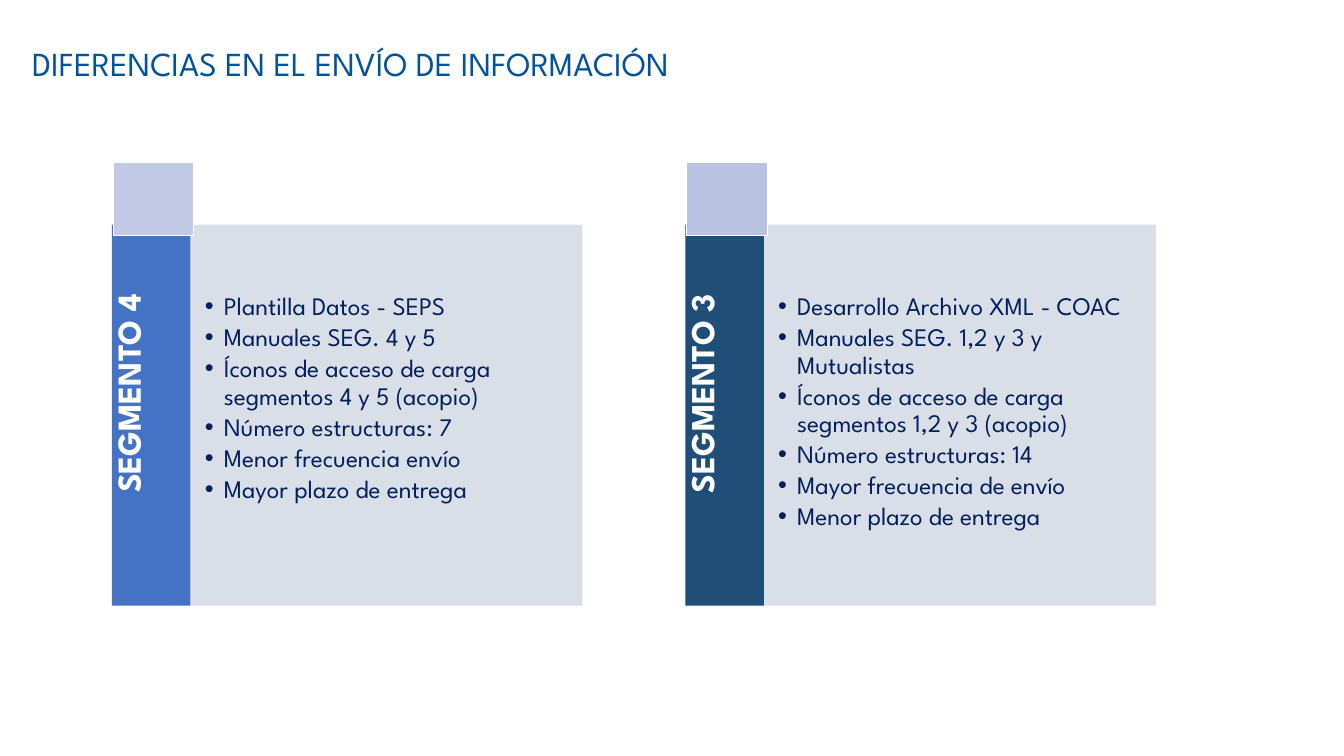
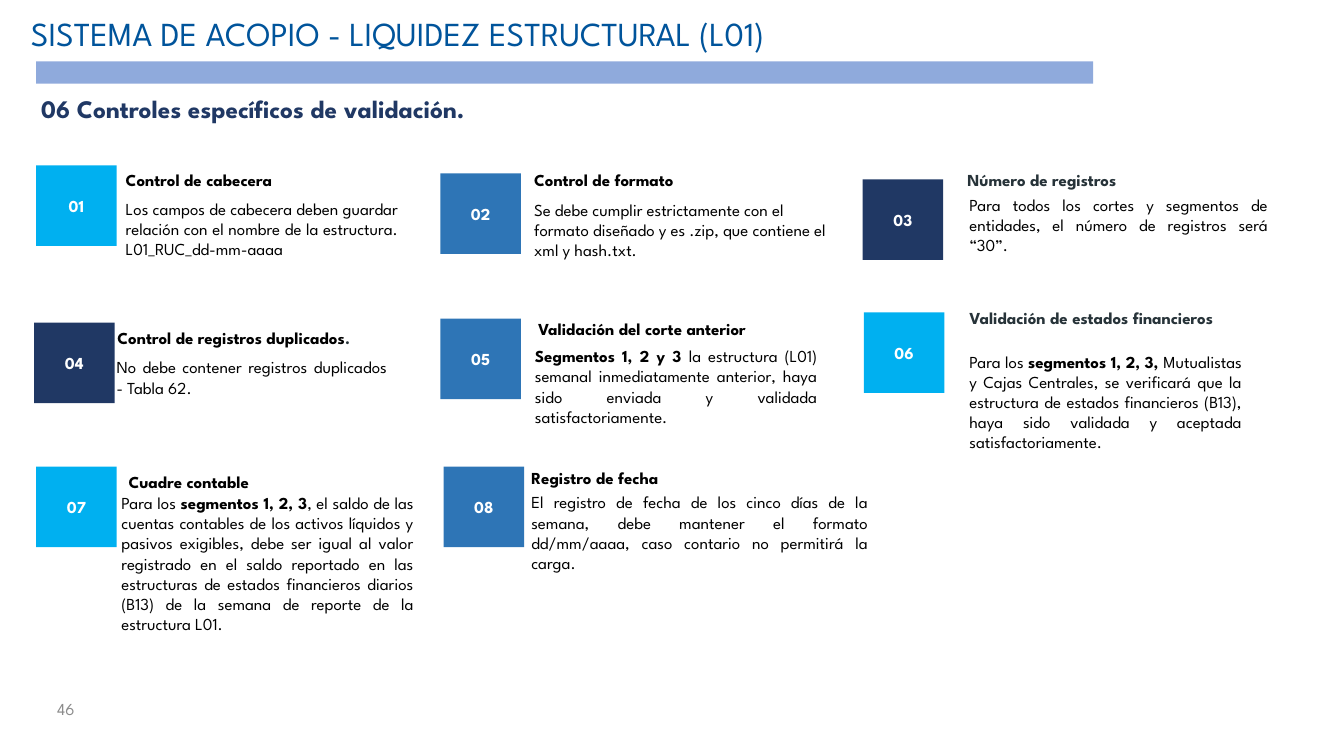
from lxml import etree
from pptx import Presentation, util as u
from pptx.dml.color import RGBColor
from pptx.enum import shapes, text
from pptx.oxml.ns import qn

Cm, Pt = u.Cm, u.Pt
FONT = "League Spartan"
COLORS = {
    "title": "00549B", "white": "FFFFFF", "black": "000000", "graphite": "273339",
    "navy": "203864", "blue": "2E75B6", "cyan": "00B0F0", "band": "8FAADC",
    "list": "002060", "panel": "D6DCE5", "number": "8C8C8C",
    "segment4": "4472C4", "segment3": "1F4E79", "tab4": "C1C9E4", "tab3": "B9C2E1",
}
LEFT, RIGHT = text.PP_ALIGN.LEFT, text.PP_ALIGN.RIGHT
CENTER, JUSTIFY = text.PP_ALIGN.CENTER, text.PP_ALIGN.JUSTIFY
TOP, MIDDLE = text.MSO_ANCHOR.TOP, text.MSO_ANCHOR.MIDDLE
INSETS = (0.25, 0.13, 0.25, 0.13)


# Shared helpers
def rgb(name):
    return RGBColor.from_string(COLORS[name])


def place(sp, x, y, w, h):
    sp.left, sp.top, sp.width, sp.height = Cm(x), Cm(y), Cm(w), Cm(h)


def setup_frame(tf, anchor=TOP, insets=INSETS):
    tf.word_wrap = True
    tf.auto_size = text.MSO_AUTO_SIZE.NONE
    tf.vertical_anchor = anchor
    tf.margin_left, tf.margin_top, tf.margin_right, tf.margin_bottom = map(Cm, insets)


def add_run(p, content, size, color, bold=False):
    r = p.add_run()
    r.text = content
    r.font.name, r.font.size, r.font.bold = FONT, Pt(size), bold
    r.font.color.rgb = rgb(color)


def add_rect(s, x, y, w, h, fill, line=None):
    sp = s.shapes.add_shape(shapes.MSO_SHAPE.RECTANGLE, Cm(x), Cm(y), Cm(w), Cm(h))
    sp.shadow.inherit = False
    sp.fill.solid()
    sp.fill.fore_color.rgb = rgb(fill)
    if line:
        sp.line.color.rgb = rgb(line)
        sp.line.width = Pt(0.5)
    else:
        sp.line.fill.background()
    return sp


def add_text(s, x, y, w, h, paragraphs, size=12, align=LEFT, anchor=TOP, insets=INSETS):
    """Each paragraph is a list of (text, color, bold) runs."""
    tf = s.shapes.add_textbox(Cm(x), Cm(y), Cm(w), Cm(h)).text_frame
    setup_frame(tf, anchor, insets)
    for i, runs in enumerate(paragraphs):
        p = tf.add_paragraph() if i else tf.paragraphs[0]
        p.alignment = align
        for content, color, bold in runs:
            add_run(p, content, size, color, bold)


def set_title(s, content, x, y, w):
    sp = s.shapes.title
    place(sp, x, y, w, 1.27)
    setup_frame(sp.text_frame)
    p = sp.text_frame.paragraphs[0]
    p.alignment = LEFT
    add_run(p, content, 24, "title")


# Segment panel: list, rotated label bar and tab
def fill_list(sp, items):
    sp.fill.solid()
    sp.fill.fore_color.rgb = rgb("panel")
    color = sp.fill._xPr.find(qn("a:solidFill"))[0]
    etree.SubElement(color, qn("a:alpha")).set("val", "90000")
    tf = sp.text_frame
    setup_frame(tf, insets=(0.36, 1.75, 0.36, 0.36))
    for i, item in enumerate(items):
        p = tf.add_paragraph() if i else tf.paragraphs[0]
        pPr = p._p.get_or_add_pPr()
        pPr.set("marL", str(Cm(0.48)))
        pPr.set("indent", str(-Cm(0.48)))
        etree.SubElement(pPr, qn("a:buChar")).set("char", "•")
        p.alignment = LEFT
        p.line_spacing = 0.9
        p.space_before, p.space_after = Pt(0), Pt(2.7)
        add_run(p, item, 18, "list")


def segment_panel(s, body, x, y, label, bar_color, tab_color, items):
    bar_w, height = 1.98, 9.6
    place(body, x + bar_w, y, 9.88, height)
    fill_list(body, items)

    bar = add_rect(s, x + (bar_w - height) / 2, y + (height - bar_w) / 2,
                   height, bar_w, bar_color)
    bar.rotation = 270
    setup_frame(bar.text_frame, insets=(0, 0, 1.75, 0))
    p = bar.text_frame.paragraphs[0]
    p.alignment = RIGHT
    p.line_spacing = 0.9
    add_run(p, label, 24, "white", True)

    add_rect(s, x + 0.03, y - 1.57, 2.03, 1.85, tab_color, "white")


def comparison_slide(prs):
    s = prs.slides.add_slide(prs.slide_layouts[3])
    set_title(s, "DIFERENCIAS EN EL ENVÍO DE INFORMACIÓN", 0.56, 0.94, 26.47)
    segments = [
        ("SEGMENTO 4", "segment4", "tab4", [
            "Plantilla Datos - SEPS",
            "Manuales SEG. 4 y 5",
            "Íconos de acceso de carga segmentos 4 y 5 (acopio)",
            "Número estructuras: 7",
            "Menor frecuencia envío",
            "Mayor plazo de entrega"]),
        ("SEGMENTO 3", "segment3", "tab3", [
            "Desarrollo Archivo XML - COAC",
            "Manuales SEG. 1,2 y 3 y Mutualistas",
            "Íconos de acceso de carga segmentos 1,2 y 3 (acopio)",
            "Número estructuras: 14",
            "Mayor frecuencia de envío",
            "Menor plazo de entrega"]),
    ]
    for i, segment in enumerate(segments):
        segment_panel(s, s.placeholders[i + 1], 2.82 + i * 14.45, 5.66, *segment)


# Control: numbered tile, heading and explanation
def control(s, number, x, y, fill, heading, head_at, body, body_at, align=JUSTIFY):
    """head_at is (dx, dy) and body_at is (dx, dy, width), both from the tile."""
    tile = add_rect(s, x, y, 2.03, 2.03, fill)
    setup_frame(tile.text_frame, MIDDLE)
    p = tile.text_frame.paragraphs[0]
    p.alignment = CENTER
    add_run(p, f"{number:02d}", 12, "white", True)

    dx, dy = head_at
    add_text(s, x + dx, y + dy, 7.5, 0.76, [heading])
    dx, dy, width = body_at
    add_text(s, x + dx, y + dy, width, 2.3, body, align=align)


def head(content, color="black"):
    return (content, color, True)


def plain(content):
    return (content, "black", False)


def controls_slide(prs):
    s = prs.slides.add_slide(prs.slide_layouts[5])
    set_title(s, "SISTEMA DE ACOPIO - LIQUIDEZ ESTRUCTURAL (L01)", 0.53, 0.2, 23.65)
    add_rect(s, 0.91, 1.55, 26.64, 0.56, "band")
    add_text(s, 1.04, 2.36, 19.66, 1.42,
             [[("06 Controles específicos de validación.", "navy", True)]],
             size=18, insets=(0, 0, 0.33, 0))

    controls = [
        (0.91, 4.17, "cyan", [head("Control de cabecera")], (2.01, -0.03),
         [[plain("Los campos de cabecera deben guardar relación con el nombre "
                 "de la estructura. ")],
          [plain("L01_RUC_dd-mm-aaaa")]], (2.01, 0.71, 7.37)),
        (11.1, 4.37, "blue", [head("Control de formato")], (2.11, -0.23),
         [[plain("Se debe cumplir estrictamente con el formato diseñado y es .zip, "
                 "que contiene el xml y hash.txt.")]], (2.11, 0.53, 8.23), LEFT),
        (21.74, 4.52, "navy", [head("Número de registros", "graphite")], (2.39, -0.38),
         [[plain("Para todos los cortes y segmentos de entidades, el número de "
                 "registros será “30”.")]], (2.44, 0.25, 8.03)),
        (0.86, 8.13, "navy",
         [head("Control de registros duplicados"), head(".", "graphite")], (1.85, 0),
         [[plain("No debe contener registros duplicados - Tabla 62.")]],
         (1.83, 0.74, 7.32)),
        (11.1, 8.03, "blue", [head("Validación del corte anterior")], (2.21, -0.13),
         [[head("Segmentos 1, 2 y 3 "),
           plain("la estructura (L01) semanal inmediatamente anterior, haya sido "
                 "enviada y validada satisfactoriamente.")]], (2.13, 0.56, 7.62)),
        (21.77, 7.87, "cyan", [head("Validación de estados financieros", "graphite")],
         (2.41, -0.25),
         [[plain("Para los "), head("segmentos 1, 2, 3, "),
           plain("Mutualistas y Cajas Centrales, se verificará que la estructura de "
                 "estados financieros (B13), haya sido validada y aceptada "
                 "satisfactoriamente.")]], (2.41, 0.86, 7.37)),
        (0.91, 11.76, "cyan", [head("Cuadre contable")], (2.08, 0),
         [[plain("Para los "), head("segmentos 1, 2, 3"),
           plain(", el saldo de las cuentas contables de los activos líquidos y "
                 "pasivos exigibles, debe ser igual al valor registrado en el saldo "
                 "reportado en las estructuras de estados financieros diarios (B13) "
                 "de la semana de reporte de la estructura L01.")]], (1.9, 0.53, 7.87)),
        (11.18, 11.76, "blue", [head("Registro de fecha")], (1.96, -0.1),
         [[plain("El registro de fecha de los cinco días de la semana, debe mantener "
                 "el formato dd/mm/aaaa, caso contario no permitirá la carga.")]],
         (1.96, 0.51, 8.99)),
    ]
    for number, parts in enumerate(controls, 1):
        control(s, number, *parts)

    # Page number
    add_text(s, 0.91, 17.32, 1.22, 1.09, [[("46", "number", False)]],
             align=RIGHT, anchor=MIDDLE)


def main():
    prs = Presentation()
    prs.slide_width, prs.slide_height = Cm(33.87), Cm(19.05)
    comparison_slide(prs)
    controls_slide(prs)
    prs.save("out.pptx")


if __name__ == "__main__":
    main()
